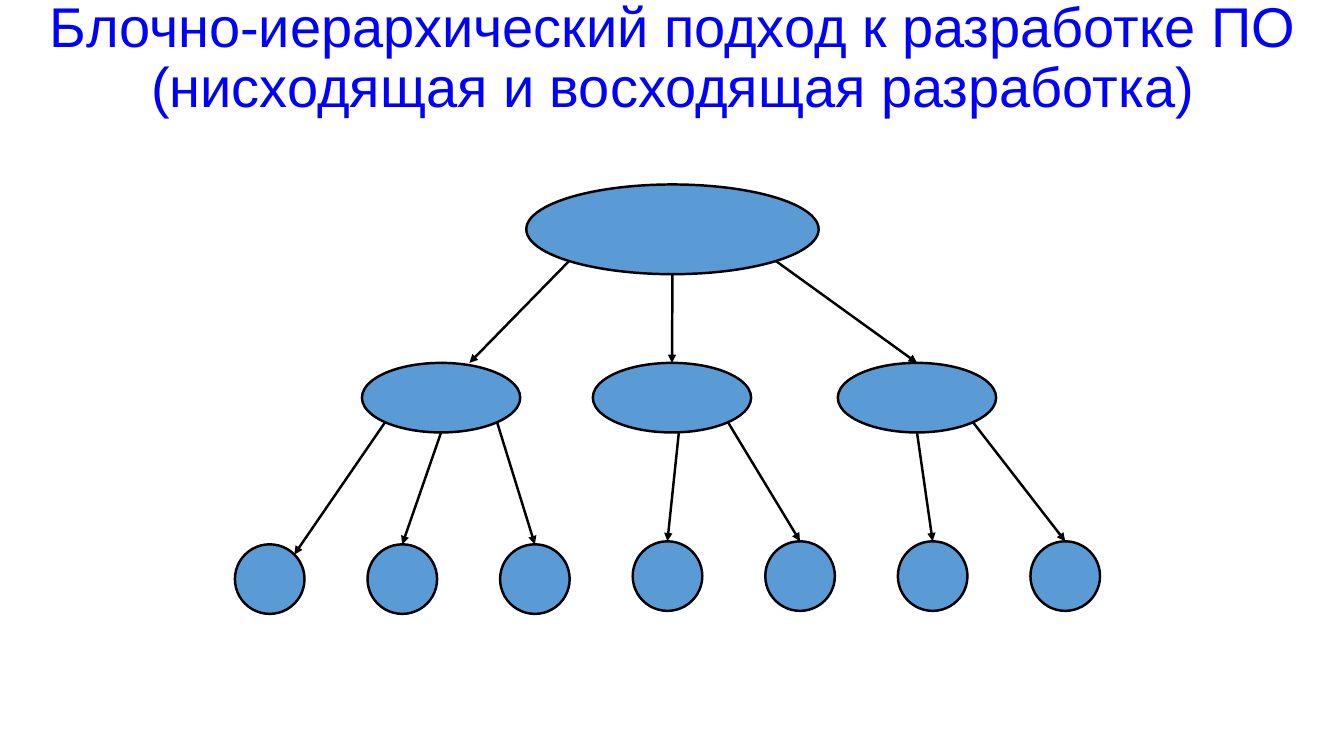
from math import cos, radians, sin

from lxml import etree
from pptx import Presentation
from pptx.dml.color import RGBColor
from pptx.enum.shapes import MSO_CONNECTOR as CONN, MSO_SHAPE as SHAPE
from pptx.enum.text import MSO_ANCHOR as ANCHOR, PP_ALIGN as ALIGN
from pptx.oxml.ns import qn
from pptx.util import Inches, Pt

TOP, TOP_RIGHT, BOTTOM_RIGHT, BOTTOM, BOTTOM_LEFT = -90, -45, 45, 90, 135
ROOT_SIZE, BLOCK_SIZE, LEAF_SIZE = (2.9, 0.89), (1.57, 0.69), (0.69, 0.69)
BLOCKS = [
    (1.26, [BOTTOM_LEFT, BOTTOM, BOTTOM_RIGHT]),
    (3.55, [85, BOTTOM_RIGHT]),
    (5.98, [BOTTOM, BOTTOM_RIGHT]),
]
ROOT_ANGLES = [BOTTOM_LEFT, BOTTOM, BOTTOM_RIGHT]
BLOCK_ANGLES = [-69, TOP, TOP]


def color(value):
    return RGBColor.from_string(value)


def add_node(s, x, y, size):
    w, h = size
    sp = s.shapes.add_shape(SHAPE.OVAL, Inches(x), Inches(y), Inches(w), Inches(h))
    sp.shadow.inherit = False
    sp.fill.solid()
    sp.fill.fore_color.rgb = color("5B9BD5")
    sp.line.color.rgb = color("000000")
    sp.line.width = Pt(1.75)
    return x, y, w, h


def rim_point(node, angle):
    x, y, w, h = node
    a = radians(angle)
    return x + w / 2 * (1 + cos(a)), y + h / 2 * (1 + sin(a))


def add_arrow(s, start, end):
    points = [Inches(v) for v in (*start, *end)]
    line = s.shapes.add_connector(CONN.STRAIGHT, *points)
    line.line.color.rgb = color("000000")
    line.line.width = Pt(1.75)
    etree.SubElement(line.line._get_or_add_ln(), qn("a:tailEnd"), type="triangle")
    etree.SubElement(line._element.spPr, qn("a:effectLst"))


def add_title(s, x, y, w, h):
    tf = s.shapes.add_textbox(Inches(x), Inches(y), Inches(w), Inches(h)).text_frame
    tf.word_wrap = True
    tf.vertical_anchor = ANCHOR.BOTTOM
    p = tf.paragraphs[0]
    p.alignment = ALIGN.CENTER
    p.line_spacing = 0.9
    r = p.add_run()
    r.text = "Блочно-иерархический подход к разработке ПО (нисходящая и восходящая разработка)"
    r.font.name = "Arial"
    r.font.size = Pt(40)
    r.font.color.rgb = color("0000FF")


def add_tree(s, x, y, w, h):
    leaf_count = sum(len(angles) for _, angles in BLOCKS)
    pitch = (w - LEAF_SIZE[0]) / (leaf_count - 1)
    leaf_y = y + h - LEAF_SIZE[1]
    root = add_node(s, x + 2.89, y, ROOT_SIZE)
    leaf = 0
    for i, (offset, angles) in enumerate(BLOCKS):
        block = add_node(s, x + offset, y + 1.77, BLOCK_SIZE)
        add_arrow(s, rim_point(root, ROOT_ANGLES[i]), (
            rim_point(block, BLOCK_ANGLES[i])[0], block[1]))
        lift = 0 if i == 0 else 0.03
        for angle in angles:
            node = add_node(s, x + leaf * pitch, leaf_y - lift, LEAF_SIZE)
            target = TOP_RIGHT if leaf == 0 else TOP
            add_arrow(s, rim_point(block, angle), rim_point(node, target))
            leaf += 1


def main():
    prs = Presentation()
    prs.slide_width, prs.slide_height = Inches(13.33), Inches(7.5)
    s = prs.slides.add_slide(prs.slide_layouts[6])
    add_title(s, -0.01, 0.55, 13.36, 0.69)
    add_tree(s, 2.33, 1.83, 8.58, 4.26)
    prs.save("out.pptx")


if __name__ == "__main__":
    main()
